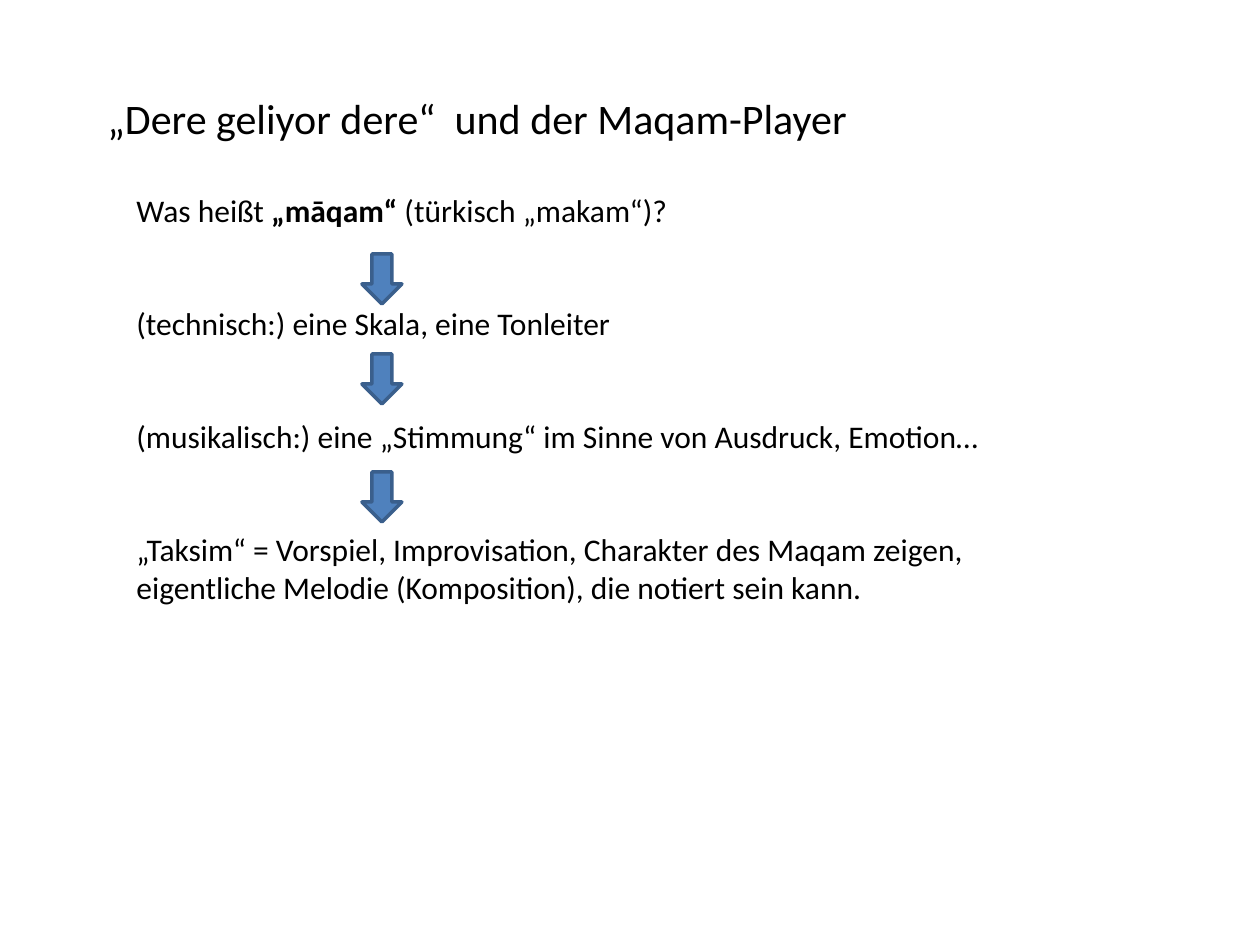
"""Build the slide on the meaning of maqam, with arrows between the steps."""
from pptx import Presentation
from pptx import util as u
from pptx.dml.color import RGBColor
from pptx.enum import shapes, text

PX = 914400 // 126
FONT = "Calibri"
TITLE = [(0, [("„Dere geliyor dere“  und der Maqam-Player", False)])]
GAP = 43
STEPS = [
    (0, [("Was heißt ", False), ("„māqam“ ", True), ("(türkisch „makam“)?", False)]),
    (GAP, [("(technisch:) eine Skala, eine Tonleiter", False)]),
    (GAP, [("(musikalisch:) eine „Stimmung“ im Sinne von Ausdruck, Emotion…", False)]),
    (GAP, [("„Taksim“ = Vorspiel, Improvisation, Charakter des Maqam zeigen,", False)]),
    (0, [("eigentliche Melodie (Komposition), die notiert sein kann.", False)]),
]
ARROW_LEFT, ARROW_WIDTH, ARROW_HEIGHT = 362, 40, 50
ARROW_TOPS = [254, 354, 472]


def px(*lengths):
    return [u.Emu(length * PX) for length in lengths]


def color(value):
    return RGBColor.from_string(value)


def add_text(page, place, paragraphs, size):
    box = page.shapes.add_textbox(*px(*place))
    frame = box.text_frame
    frame.word_wrap = False
    frame.auto_size = text.MSO_AUTO_SIZE.SHAPE_TO_FIT_TEXT
    for index, (gap, spans) in enumerate(paragraphs):
        para = frame.paragraphs[0] if index == 0 else frame.add_paragraph()
        para.space_before = u.Pt(gap)
        para.font.name, para.font.size = FONT, u.Pt(size)
        para.font.color.rgb = color("000000")
        for words, bold in spans:
            span = para.add_run()
            span.text = words
            if bold:
                span.font.bold = True
    return box


def add_arrow(page, top):
    arrow = page.shapes.add_shape(
        shapes.MSO_SHAPE.DOWN_ARROW, *px(ARROW_LEFT, top, ARROW_WIDTH, ARROW_HEIGHT))
    arrow.shadow.inherit = False
    arrow.fill.solid()
    arrow.fill.fore_color.rgb = color("4F81BD")
    arrow.line.color.rgb = color("3A5F8C")
    arrow.line.width = u.Pt(2)


def main():
    deck = Presentation()
    deck.slide_width, deck.slide_height = px(1260, 945)
    page = deck.slides.add_slide(deck.slide_layouts[6])
    title = add_text(page, (95, 86, 800, 63), TITLE, 24)
    title.fill.solid()
    title.fill.fore_color.rgb = color("FFFFFF")
    add_text(page, (124, 185, 878, 471), STEPS, 18)
    for top in ARROW_TOPS:
        add_arrow(page, top)
    deck.save("out.pptx")


if __name__ == "__main__":
    main()
